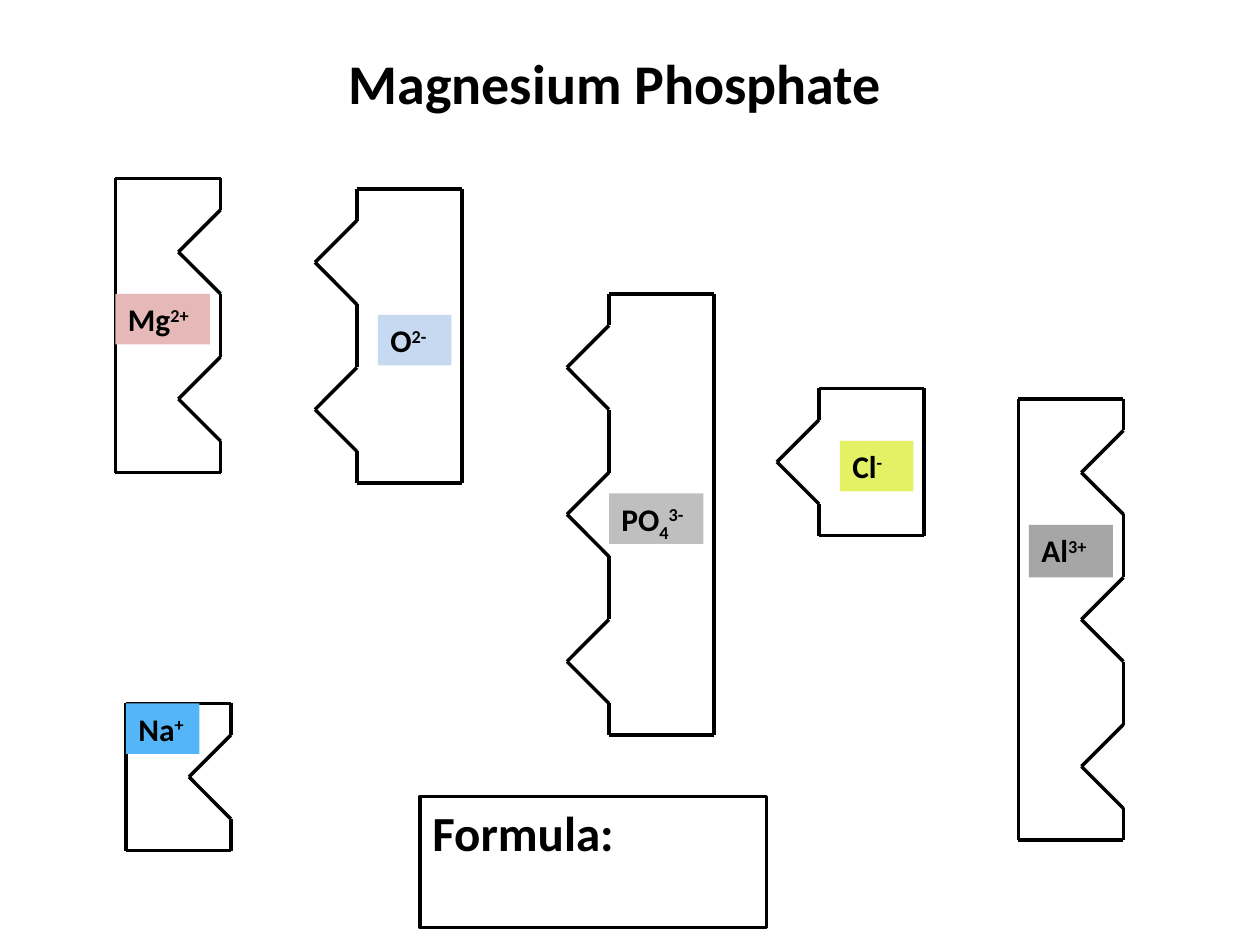
from pptx import Presentation
from pptx.dml.color import RGBColor
from pptx.enum.shapes import MSO_CONNECTOR as Connector, MSO_SHAPE as Shape
from pptx.enum.text import MSO_ANCHOR as Anchor, PP_ALIGN as Align
from pptx.oxml.ns import qn
from pptx.util import Inches, Pt
from lxml.etree import SubElement

COLUMNS, ROWS = 120, 90
WIDTH, HEIGHT = Inches(10), Inches(7.5)
INK = "000000"
BODY, TOOTH, DEPTH, SHOULDER = 10, 14, 4, 3

SUPER, SUB = 30000, -25000

IONS = [
    (34, 18, 2, True, (36, 30, 7, 4.8), "C6D9F1", [("O", 0), ("2-", SUPER)]),
    (21, 17, 2, False, (11, 28, 9, 4.8), "E6B9B8", [("Mg", 0), ("2+", SUPER)]),
    (22, 67, 1, False, (12, 67, 7, 4.8), "54B6F8", [("Na", 0), ("+", SUPER)]),
    (107, 38, 3, False, (98, 50, 8, 5), "A6A6A6", [("Al", 0), ("3+", SUPER)]),
    (58, 28, 3, True, (58, 47, 9, 4.8), "BFBFBF",
     [("PO", 0), ("4", SUB), ("3-", SUPER)]),
    (78, 37, 1, True, (80, 42, 7, 4.8), "E4F165", [("Cl", 0), ("-", SUPER)]),
]


def color(value):
    """Turn a hex string into a colour."""
    return RGBColor.from_string(value)


def place(column, row):
    """Turn grid coordinates into slide lengths."""
    return round(WIDTH * column / COLUMNS), round(HEIGHT * row / ROWS)


def write(frame, parts, size):
    """Fill a text frame with bold, left-aligned runs on their baselines."""
    frame.word_wrap = True
    frame.vertical_anchor = Anchor.TOP
    paragraph = frame.paragraphs[0]
    paragraph.alignment = Align.LEFT
    for words, baseline in parts:
        run = paragraph.add_run()
        run.text = words
        run.font.name, run.font.size, run.font.bold = "Calibri", Pt(size), True
        run.font.color.rgb = color(INK)
        if baseline:
            run._r.get_or_add_rPr().set("baseline", str(baseline))


def add_title(slide, box, words):
    """Place the compound's name in the title placeholder."""
    title = slide.shapes.title
    title.left, title.top = place(*box[:2])
    title.width, title.height = place(*box[2:])
    write(title.text_frame, [(words, 0)], 32)


def add_box(shapes, box, parts, size, fill=None, outline=None):
    """Add a text rectangle with an optional fill and outline."""
    panel = shapes.add_shape(Shape.RECTANGLE, *place(*box[:2]), *place(*box[2:]))
    panel.shadow.inherit = False
    if fill:
        panel.fill.solid()
        panel.fill.fore_color.rgb = color(fill)
    else:
        panel.fill.background()
    if outline:
        panel.line.color.rgb = color(outline)
        panel.line.width = Pt(2)
    else:
        panel.line.fill.background()
    write(panel.text_frame, parts, size)


def add_edge(shapes, start, end):
    """Draw one straight edge between two grid points."""
    edge = shapes.add_connector(Connector.STRAIGHT, *place(*start), *place(*end))
    edge.line.color.rgb = color(INK)
    edge.line.width = Pt(2)
    SubElement(edge._element.spPr, qn("a:effectLst"))


def add_ion(slide, toothed, top, charge, is_anion, label_box, fill, formula):
    """Draw an ion tile with one tooth or notch for each unit of charge."""
    shapes = slide.shapes.add_group_shape().shapes
    back = toothed + (BODY if is_anion else -BODY)
    bottom = top + charge * TOOTH
    for row in (top, bottom):
        add_edge(shapes, (toothed, row), (back, row))
    for start in range(top, bottom, TOOTH):
        end = start + TOOTH
        profile = [
            (toothed, start),
            (toothed, start + SHOULDER),
            (toothed - DEPTH, start + TOOTH / 2),
            (toothed, end - SHOULDER),
            (toothed, end),
        ]
        for upper, lower in zip(profile, profile[1:]):
            add_edge(shapes, upper, lower)
        add_edge(shapes, (back, start), (back, end))
    add_box(shapes, label_box, formula, 18, fill=fill)


def main():
    """Build the ion tile slide."""
    deck = Presentation()
    deck.slide_width, deck.slide_height = WIDTH, HEIGHT
    slide = deck.slides.add_slide(deck.slide_layouts[5])
    add_title(slide, (32, 4, 56, 7.7), "Magnesium Phosphate")
    add_box(slide.shapes, (40, 75.85, 33, 12.5), [("Formula:", 0)], 28, outline=INK)
    for ion in IONS:
        add_ion(slide, *ion)
    deck.save("out.pptx")


if __name__ == "__main__":
    main()
